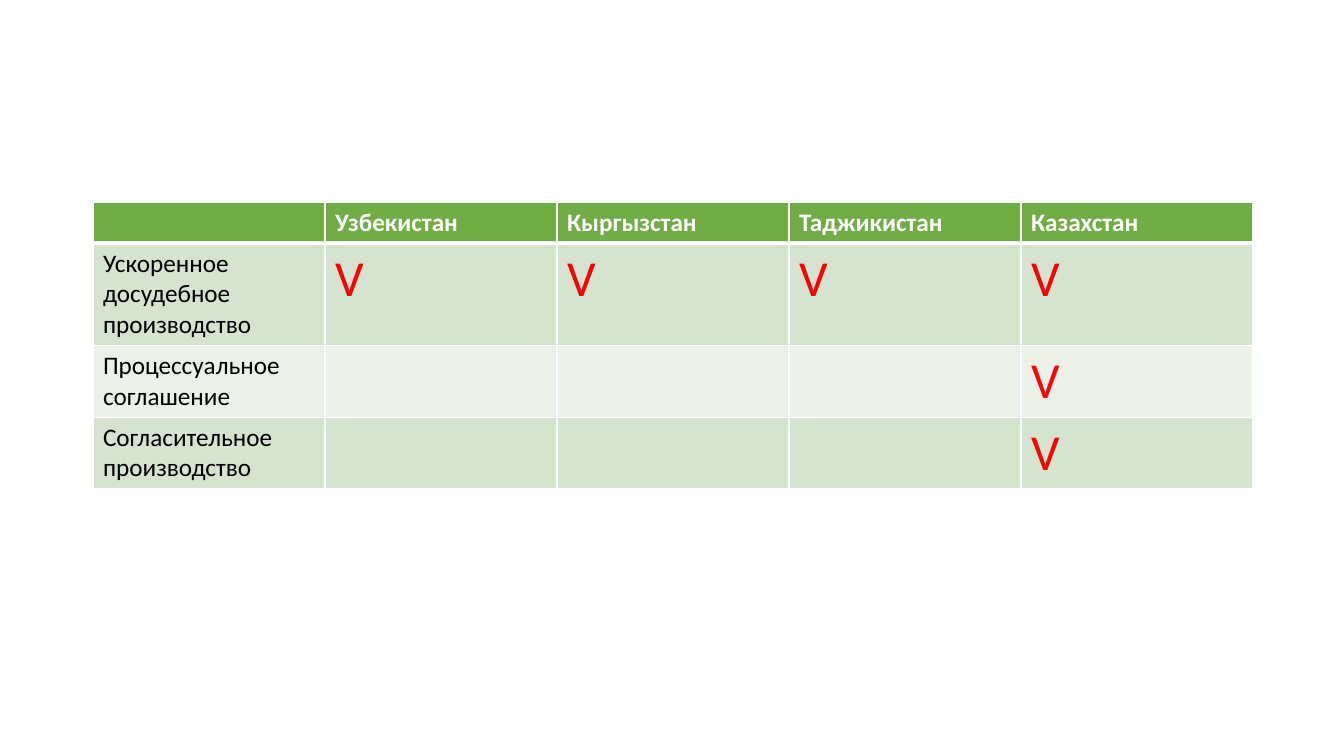
import pptx
import pptx.dml.color
import pptx.oxml
import pptx.oxml.ns
import pptx.util

COUNTRIES = ["Узбекистан", "Кыргызстан", "Таджикистан", "Казахстан"]
PROCEDURES = [
    ("Ускоренное досудебное производство", COUNTRIES),
    ("Процессуальное соглашение", ["Казахстан"]),
    ("Согласительное производство", ["Казахстан"]),
]
MARK = "V"

COLORS = {
    "header": "70AD47",
    "odd": "D5E3CF",
    "even": "EBF1E9",
    "border": "FFFFFF",
    "header_text": "FFFFFF",
    "text": "000000",
    "mark": "FF0000",
}
FONT = "Calibri"

EMU_PER_PX = 914400 / 100.8
SLIDE_W, SLIDE_H = 1344, 756
TABLE_LEFT, TABLE_TOP, TABLE_H = 93, 202, 283
COLUMN_W, MIN_ROW_H = 232, 41


def px(length):
    return pptx.util.Emu(round(length * EMU_PER_PX))


def rgb(name):
    return pptx.dml.color.RGBColor.from_string(COLORS[name])


def write(cell, text, size=18, color="text", bold=False):
    run = cell.text_frame.paragraphs[0].add_run()
    run.text = text
    run.font.name = FONT
    run.font.size = pptx.util.Pt(size)
    run.font.bold = bold
    run.font.color.rgb = rgb(color)


def paint(cell, fill, top=1, bottom=1):
    """Fill a cell and draw its borders, with widths in points."""
    widths = {"lnL": 1, "lnR": 1, "lnT": top, "lnB": bottom}
    properties = cell._tc.get_or_add_tcPr()
    for side, width in widths.items():
        properties.append(pptx.oxml.parse_xml(
            f'<a:{side} {pptx.oxml.ns.nsdecls("a")} w="{pptx.util.Pt(width)}">'
            f'<a:solidFill><a:srgbClr val="{COLORS["border"]}"/></a:solidFill>'
            f'</a:{side}>'))
    cell.fill.solid()
    cell.fill.fore_color.rgb = rgb(fill)


def main():
    deck = pptx.Presentation()
    deck.slide_width, deck.slide_height = px(SLIDE_W), px(SLIDE_H)
    slide = deck.slides.add_slide(deck.slide_layouts[6])

    row_count, column_count = len(PROCEDURES) + 1, len(COUNTRIES) + 1
    frame = slide.shapes.add_table(
        row_count, column_count, px(TABLE_LEFT), px(TABLE_TOP),
        px(COLUMN_W * column_count), px(MIN_ROW_H * row_count))
    frame.height = px(TABLE_H)
    comparison = frame.table

    for row in range(row_count):
        fill = "header" if row == 0 else "odd" if row % 2 else "even"
        for column in range(column_count):
            paint(comparison.cell(row, column), fill,
                  top=3 if row == 1 else 1, bottom=3 if row == 0 else 1)

    for column, country in enumerate(COUNTRIES, 1):
        write(comparison.cell(0, column), country, color="header_text", bold=True)

    for row, (procedure, adopters) in enumerate(PROCEDURES, 1):
        write(comparison.cell(row, 0), procedure)
        for column, country in enumerate(COUNTRIES, 1):
            if country in adopters:
                write(comparison.cell(row, column), MARK, size=36, color="mark")

    deck.save("out.pptx")


if __name__ == "__main__":
    main()
